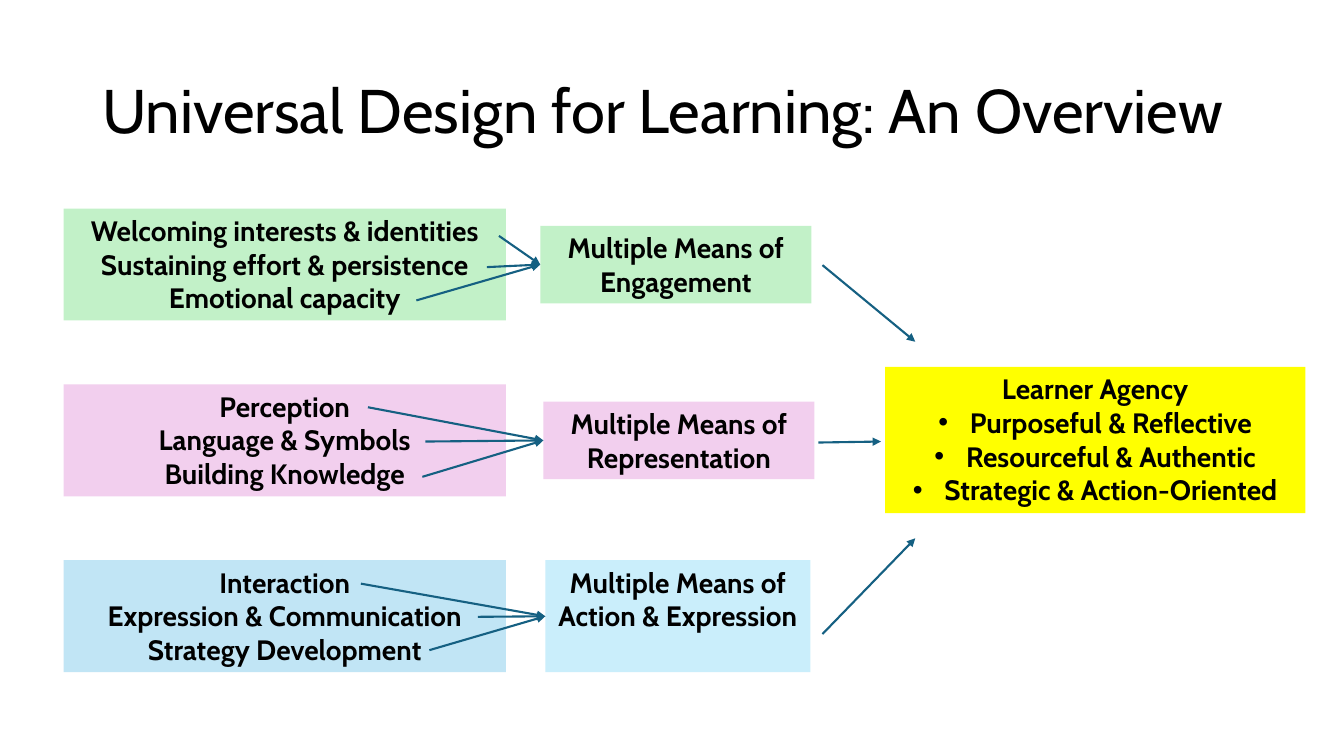
"""Build the Universal Design for Learning overview slide."""
from lxml.etree import SubElement
from pptx import Presentation
from pptx.dml.color import RGBColor
from pptx.enum.shapes import MSO_CONNECTOR, MSO_SHAPE
from pptx.enum.text import MSO_ANCHOR, PP_ALIGN
from pptx.oxml.ns import qn
from pptx.util import Pt

COLOURS = {
    "text": "000000", "arrow": "156082", "agency": "FFFF00",
    "green": "C2F1C8", "pink": "F2CFEE", "blue": "C1E5F5", "pale blue": "CAEEFB",
}
FONT = "Cabin"
TITLE = "Universal Design for Learning: An Overview"
ROWS = [
    {
        "considerations": ["Welcoming interests & identities",
                           "Sustaining effort & persistence", "Emotional capacity"],
        "fill": "green",
        "arrow_starts": [(356.4, 168.5), (347.8, 190.8), (297.4, 214.6)],
        "principle": "Multiple Means of Engagement",
        "principle_fill": "green",
        "principle_box": (385.9, 193.7, 55.4),
    },
    {
        "considerations": ["Perception", "Language & Symbols", "Building Knowledge"],
        "fill": "pink",
        "arrow_starts": [(262.8, 290.9), (303.8, 315.4), (301.7, 340.6)],
        "principle": "Multiple Means of Representation",
        "principle_fill": "pink",
        "principle_box": (388.1, 193.7, 55.4),
    },
    {
        "considerations": ["Interaction", "Expression & Communication",
                           "Strategy Development"],
        "fill": "blue",
        "arrow_starts": [(257.8, 416.9), (341.3, 440.6), (306.7, 464.4)],
        "principle": "Multiple Means of Action & Expression",
        "principle_fill": "pale blue",
        "principle_box": (389.5, 189.4, 80),
    },
]
AGENCY = ["Learner Agency", "Purposeful & Reflective", "Resourceful & Authentic",
          "Strategic & Action-Oriented"]
AGENCY_ARROWS = [
    ((587.5, 189.4), (653.8, 244.1)),
    ((584.6, 316.1), (629.3, 315.4)),
    ((587.5, 452.9), (653.8, 384.5)),
]
ROW_LEFT, ROW_TOP, ROW_WIDTH, ROW_HEIGHT, ROW_PITCH = 45.4, 149, 316, 80, 125.6


def write(box, lines, size=20, bold=True, align=PP_ALIGN.CENTER,
          anchor=MSO_ANCHOR.TOP, spacing=1.0, bullets_from=None):
    """Fill a box with one paragraph per line."""
    frame = box.text_frame
    frame.word_wrap = True
    frame.vertical_anchor = anchor
    for index, line in enumerate(lines):
        para = frame.paragraphs[0] if index == 0 else frame.add_paragraph()
        para.alignment = align
        para.line_spacing = spacing
        if bullets_from is not None and index >= bullets_from:
            properties = para._p.get_or_add_pPr()
            properties.set("marL", str(Pt(22.5)))
            properties.set("indent", str(-Pt(22.5)))
            SubElement(properties, qn("a:buFont"), typeface="Arial")
            SubElement(properties, qn("a:buChar"), char="•")
        span = para.add_run()
        span.text = line
        span.font.name = FONT
        span.font.size = Pt(size)
        span.font.bold = bold
        span.font.color.rgb = RGBColor.from_string(COLOURS["text"])


def add_panel(page, left, top, width, height, fill, lines, **text_format):
    """Add a filled rectangle with text."""
    box = page.shapes.add_shape(MSO_SHAPE.RECTANGLE, Pt(left), Pt(top),
                                Pt(width), Pt(height))
    box.shadow.inherit = False
    box.fill.solid()
    box.fill.fore_color.rgb = RGBColor.from_string(COLOURS[fill])
    box.line.fill.background()
    write(box, lines, **text_format)
    return box


def add_arrow(page, start, end):
    """Add a straight arrow between two points."""
    arrow = page.shapes.add_connector(MSO_CONNECTOR.STRAIGHT,
                                      *[Pt(value) for value in (*start, *end)])
    arrow.line.color.rgb = RGBColor.from_string(COLOURS["arrow"])
    arrow.line.width = Pt(1.5)
    SubElement(arrow.line._get_or_add_ln(), qn("a:tailEnd"), type="triangle")
    SubElement(arrow._element.spPr, qn("a:effectLst"))
    return arrow


def main():
    """Lay out the slide and save it."""
    deck = Presentation()
    deck.slide_width, deck.slide_height = Pt(960), Pt(540)
    page = deck.slides.add_slide(deck.slide_layouts[6])

    title = page.shapes.add_textbox(Pt(66), Pt(28.8), Pt(828), Pt(104.4))
    write(title, [TITLE], size=44, bold=False, align=PP_ALIGN.LEFT,
          anchor=MSO_ANCHOR.MIDDLE, spacing=0.9)

    for index, row in enumerate(ROWS):
        top = ROW_TOP + index * ROW_PITCH
        middle = top + ROW_HEIGHT / 2
        add_panel(page, ROW_LEFT, top, ROW_WIDTH, ROW_HEIGHT, row["fill"],
                  row["considerations"])
        left, width, height = row["principle_box"]
        principle = add_panel(page, left, middle - height / 2, width, height,
                              row["principle_fill"], [row["principle"]])
        for start in row["arrow_starts"]:
            add_arrow(page, start, (left, middle)).end_connect(principle, 1)

    add_panel(page, 632.2, 262.1, 300.2, 104.4, "agency", AGENCY, bullets_from=1)
    for start, end in AGENCY_ARROWS:
        add_arrow(page, start, end)
    deck.save("out.pptx")


if __name__ == "__main__":
    main()
